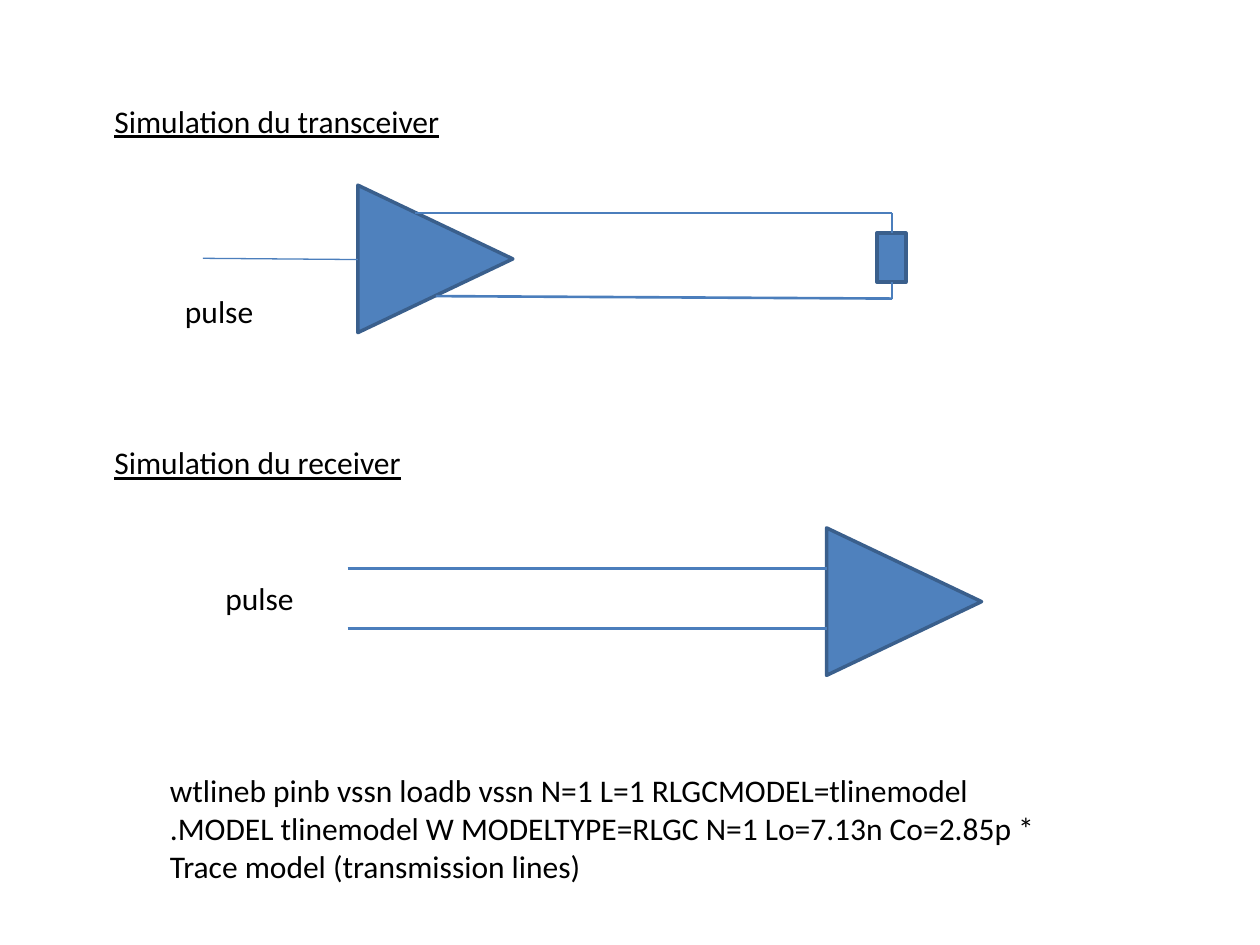
from dataclasses import dataclass

from lxml import etree
from pptx import Presentation, util as u
from pptx.dml.color import RGBColor
from pptx.enum import shapes, text
from pptx.oxml import ns

# A grid of 100 columns by 75 rows covers the slide.
COLS, ROWS = 100, 75
CELL = u.Inches(10) // COLS


@dataclass(frozen=True)
class Theme:
    fill: RGBColor = RGBColor(0x4F, 0x81, 0xBD)
    edge: RGBColor = RGBColor(0x3A, 0x5F, 0x8C)
    wire: RGBColor = RGBColor(0x4B, 0x7E, 0xBC)
    ink: RGBColor = RGBColor(0, 0, 0)
    font: str = "Calibri"
    size: u.Pt = u.Pt(18)
    border: u.Pt = u.Pt(2)
    thin: u.Pt = u.Pt(0.75)
    thick: u.Pt = u.Pt(1.5)


@dataclass(frozen=True)
class Box:
    col: float
    row: float
    wide: float
    high: float

    def place(self) -> list[int]:
        return [grid(n) for n in (self.col, self.row, self.wide, self.high)]


@dataclass(frozen=True)
class Part:
    box: Box
    kind: shapes.MSO_SHAPE
    turn: int = 0


@dataclass(frozen=True)
class Wire:
    start: tuple[float, float]
    end: tuple[float, float]
    width: u.Pt


@dataclass(frozen=True)
class Label:
    box: Box
    lines: tuple[str, ...]
    under: bool = False


THEME = Theme()


def grid(cells: float) -> int:
    return round(cells * CELL)


def style(item, **values) -> None:
    for name, value in values.items():
        setattr(item, name, value)


def draw_part(slide, part: Part) -> None:
    shape = slide.shapes.add_shape(part.kind, *part.box.place())
    shape.rotation = part.turn
    shape.shadow.inherit = False
    shape.fill.solid()
    shape.fill.fore_color.rgb = THEME.fill
    shape.line.color.rgb = THEME.edge
    shape.line.width = THEME.border


def draw_wire(slide, wire: Wire) -> None:
    ends = [grid(n) for n in wire.start + wire.end]
    line = slide.shapes.add_connector(shapes.MSO_CONNECTOR.STRAIGHT, *ends)
    line.line.color.rgb = THEME.wire
    line.line.width = wire.width
    etree.SubElement(line._element.spPr, ns.qn("a:effectLst"))


def draw_label(slide, label: Label) -> None:
    frame = slide.shapes.add_textbox(*label.box.place()).text_frame
    style(frame, word_wrap=True, auto_size=text.MSO_AUTO_SIZE.SHAPE_TO_FIT_TEXT)
    frame.text = "\n".join(label.lines)
    for para in frame.paragraphs:
        for run in para.runs:
            style(run.font, name=THEME.font, size=THEME.size)
            run.font.color.rgb = THEME.ink
            if label.under:
                run.font.underline = True


def amp(col: float, row: float) -> Part:
    """Amplifier: a triangle that points right."""
    kind = shapes.MSO_SHAPE.ISOSCELES_TRIANGLE
    return Part(Box(col, row, 11.7, 12.3), kind, 90)


def title(row: float, wide: float, words: str) -> Label:
    return Label(Box(8.1, row, wide, 4), (words,), True)


def pulse(col: float, row: float) -> Label:
    return Label(Box(col, row, 10.4, 4), ("pulse",))


LOAD = 70.8   # column of the load's axis
TOP, LOW = 16.9, 23.7   # rows where the output wires meet the load

SENDER = (
    amp(28.7, 14.4),
    Wire((28.4, 20.6), (16.1, 20.5), THEME.thin),
    Wire((32.9, TOP), (LOAD, TOP), THEME.thick),
    Wire((34.6, 23.5), (LOAD, LOW), THEME.thick),
    Part(Box(69.6, 18.5, 2.3, 3.9), shapes.MSO_SHAPE.RECTANGLE),
    Wire((LOAD, TOP), (LOAD, 18.5), THEME.thin),
    Wire((LOAD, 22.4), (LOAD, LOW), THEME.thin),
    title(7.6, 69.5, "Simulation du transceiver"),
    pulse(13.7, 22.7),
)

TAKER = (
    title(34.7, 55.9, "Simulation du receiver"),
    amp(65.9, 41.6),
    *(Wire((27.6, row), (65.6, row), THEME.thick) for row in (45.1, 49.9)),
    pulse(16.9, 45.5),
)

MODEL = Label(Box(12.5, 60.7, 71.9, 10.1), (
    "wtlineb pinb vssn loadb vssn N=1 L=1 RLGCMODEL=tlinemodel",
    ".MODEL tlinemodel W MODELTYPE=RLGC N=1 Lo=7.13n Co=2.85p * "
    "Trace model (transmission lines)",
))

DRAW = {Part: draw_part, Wire: draw_wire, Label: draw_label}


def main() -> None:
    deck = Presentation()
    style(deck, slide_width=grid(COLS), slide_height=grid(ROWS))
    slide = deck.slides.add_slide(deck.slide_layouts[6])
    for item in (*SENDER, *TAKER, MODEL):
        DRAW[type(item)](slide, item)
    deck.save("out.pptx")


if __name__ == "__main__":
    main()
